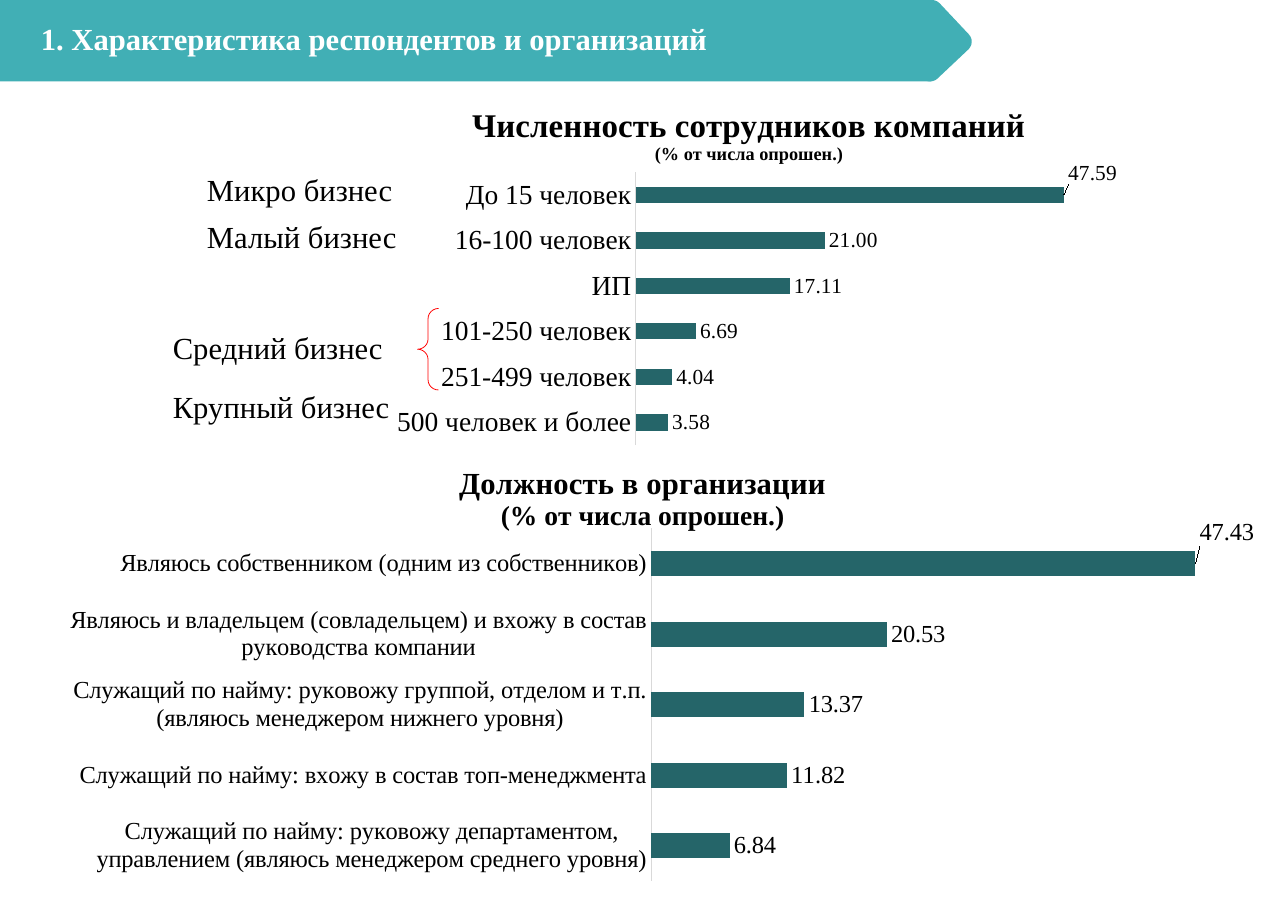
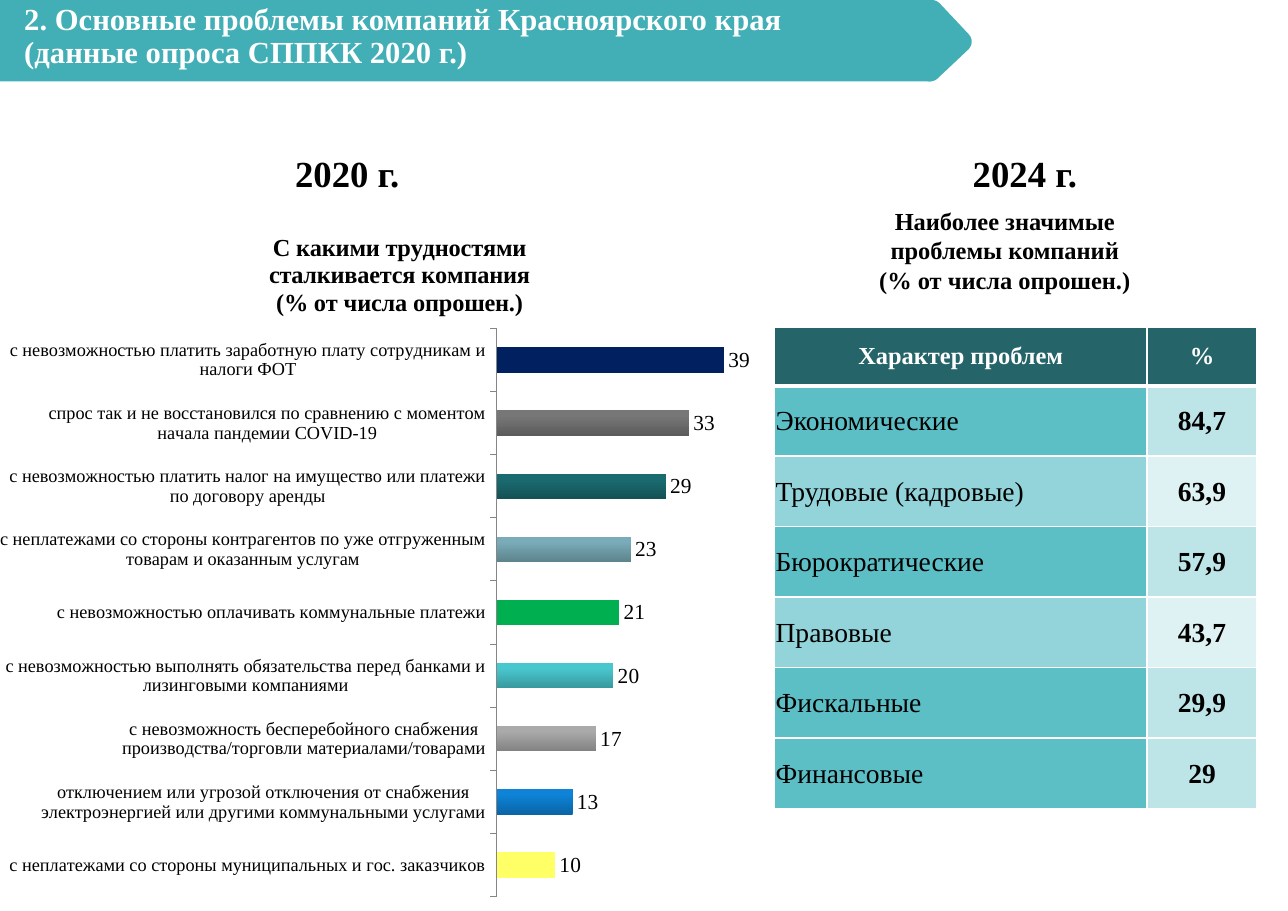
import pptx
import pptx.chart.data
import pptx.dml.color
import pptx.enum.chart
import pptx.enum.shapes
import pptx.enum.text
import pptx.oxml
import pptx.oxml.ns
import pptx.util

PX = 9144  # EMU in one px, 100 px to the inch
FONT = "Times New Roman"
COLORS = {
    "band": "41AFB5", "bar": "256569", "white": "FFFFFF", "black": "000000",
    "axis": "D9D9D9", "tick": "868686", "brace": "FF0000",
    "name_dark": "5CBFC5", "name_light": "92D4D9",
    "share_dark": "BDE5E8", "share_light": "DEF2F3",
}
RGB = {k: pptx.dml.color.RGBColor.from_string(v) for k, v in COLORS.items()}
CENTER = pptx.enum.text.PP_ALIGN.CENTER
LEFT = pptx.enum.text.PP_ALIGN.LEFT
MIDDLE = pptx.enum.text.MSO_ANCHOR.MIDDLE
SHAPE = pptx.enum.shapes.MSO_SHAPE
Pt = pptx.util.Pt
qn = pptx.oxml.ns.qn


def write(tf, lines, color="black", bold=False, align=LEFT):
    """Fill a text frame with one paragraph for each (text, size)."""
    for i, (text, size) in enumerate(lines):
        p = tf.add_paragraph() if i else tf.paragraphs[0]
        p.alignment = align
        r = p.add_run()
        r.text = text
        r.font.name, r.font.size, r.font.bold = FONT, Pt(size), bold
        r.font.color.rgb = RGB[color]


def set_layout(parent, index, **values):
    """Give a chart part a manual layout as child number index."""
    for old in parent.findall(qn("c:layout")):
        parent.remove(old)
    tags = "".join(f'<c:{k} val="{v}"/>' for k, v in values.items())
    parent.insert(index, pptx.oxml.parse_xml(
        f'<c:layout {pptx.oxml.ns.nsdecls("c")}>'
        f"<c:manualLayout>{tags}</c:manualLayout></c:layout>"))


prs = pptx.Presentation()
prs.slide_width, prs.slide_height = 1169 * PX, 827 * PX
layout = prs.slide_layouts[5]

# Titles
titles = [
    ((27, 14, 997, 45), ["1. Характеристика респондентов и организаций"]),
    ((12, 0, 851, 68), ["2. Основные проблемы компаний Красноярского края",
                        "(данные опроса СППКК 2020 г.)"]),
]
slides = []
for box, lines in titles:
    s = prs.slides.add_slide(layout)
    sp = s.shapes.title
    sp.left, sp.top, sp.width, sp.height = [v * PX for v in box]
    tf = sp.text_frame
    tf.auto_size = pptx.enum.text.MSO_AUTO_SIZE.NONE
    tf.vertical_anchor = MIDDLE
    write(tf, [(line, 20) for line in lines], "white", True)
    for p in tf.paragraphs:
        p.line_spacing = 0.9
    slides.append(s)
staff, problems = slides

# Title band, moved to the layout that both slides share
bands = [(SHAPE.RECTANGLE, (0, 0, 845, 74), 0),
         (SHAPE.ROUNDED_RECTANGLE, (816, 8, 58, 58), 46.7)]
for i, (kind, box, angle) in enumerate(bands):
    sp = staff.shapes.add_shape(kind, *[v * PX for v in box])
    sp.rotation = angle
    sp.shadow.inherit = False
    sp.fill.solid()
    sp.fill.fore_color.rgb = RGB["band"]
    sp.line.fill.background()
    layout.element.cSld.spTree.insert(2 + i, sp.element)

# Bar charts, categories from bottom to top
charts = [
    dict(slide=staff, box=(37, 411, 1108, 405), cat_size=16, label_size=16,
         title=[("Должность в организации", 20), ("(% от числа опрошен.)", 18)],
         title_at=(0.34, 0.02), plot=(0.5, 0.17, 0.47, 0.79), top=50, gap=182,
         fmt="0.00", lift=-0.07, axis="axis", tick="NONE", points={},
         data=[
             ("Служащий по найму: руковожу департаментом, управлением "
              "(являюсь менеджером среднего уровня)", 6.84),
             ("Служащий по найму: вхожу в состав топ-менеджмента", 11.82),
             ("Служащий по найму: руковожу группой, отделом и т.п. "
              "(являюсь менеджером нижнего уровня)", 13.37),
             ("Являюсь и владельцем (совладельцем) и вхожу в состав "
              "руководства компании", 20.53),
             ("Являюсь собственником (одним из собственников)", 47.43),
         ]),
    dict(slide=staff, box=(353, 76, 661, 335), cat_size=18, label_size=14,
         title=[("Численность сотрудников компаний", 21.6),
                ("(% от числа опрошен.)", 12)],
         title_at=(0.11, 0.05), plot=(0.34, 0.24, 0.62, 0.74), top=50, gap=182,
         fmt="0.00", lift=-0.06, axis="axis", tick="NONE", points={},
         data=[
             ("500 человек и более", 3.58),
             ("251-499 человек", 4.04),
             ("101-250 человек", 6.69),
             ("ИП", 17.11),
             ("16-100 человек", 21),
             ("До 15 человек", 47.59),
         ]),
    dict(slide=problems, box=(0, 182, 703, 645), cat_size=12, label_size=14,
         title=[("С какими трудностями", 16), ("сталкивается компания", 16),
                ("(% от числа опрошен.)", 16)],
         title_at=(0.34, 0.04), plot=(0.64, 0.18, 0.34, 0.8), top=45, gap=150,
         fmt="General", lift=0, axis="tick", tick="OUTSIDE",
         points={0: ["FFFF66"], 1: ["0A65A6", "0E83D7"],
                 2: ["838383", "AAAAAA"], 3: ["38999F", "49C7CE"],
                 4: ["00B050"], 5: ["5D848D", "79ABB8"],
                 6: ["145256", "1A6B70"], 7: ["5C5C5C", "777777"],
                 8: ["002060"]},
         data=[
             ("с неплатежами со стороны муниципальных и гос. заказчиков", 10),
             ("отключением или угрозой отключения от снабжения "
              "электроэнергией или другими коммунальными услугами", 13),
             ("с невозможность бесперебойного снабжения "
              "производства/торговли материалами/товарами", 17),
             ("с невозможностью выполнять обязательства перед банками "
              "и лизинговыми компаниями", 20),
             ("с невозможностью оплачивать коммунальные платежи", 21),
             ("с неплатежами со стороны контрагентов по уже отгруженным "
              "товарам и оказанным услугам", 23),
             ("с невозможностью платить налог на имущество или платежи "
              "по договору аренды", 29),
             ("спрос так и не восстановился по сравнению с моментом "
              "начала пандемии COVID-19", 33),
             ("с невозможностью платить заработную плату сотрудникам "
              "и налоги ФОТ", 39),
         ]),
]
for c in charts:
    data = pptx.chart.data.CategoryChartData(number_format=c["fmt"])
    data.categories = [name for name, _ in c["data"]]
    data.add_series("% от числа опрошен.", [value for _, value in c["data"]])
    chart = c["slide"].shapes.add_chart(
        pptx.enum.chart.XL_CHART_TYPE.BAR_CLUSTERED,
        *[v * PX for v in c["box"]], data).chart
    chart.has_legend = False
    chart.font.name, chart.font.size = FONT, Pt(c["cat_size"])
    chart.font.color.rgb = RGB["black"]

    title = chart.chart_title
    write(title.text_frame, c["title"], bold=True, align=CENTER)
    x, y = c["title_at"]
    set_layout(title._element, 1, xMode="edge", yMode="edge", x=x, y=y)
    x, y, w, h = c["plot"]
    set_layout(chart._chartSpace.chart.plotArea, 0, layoutTarget="inner",
               xMode="edge", yMode="edge", x=x, y=y, w=w, h=h)

    axis = chart.value_axis
    axis.visible = axis.has_major_gridlines = False
    axis.minimum_scale, axis.maximum_scale = 0, c["top"]
    axis = chart.category_axis
    axis.major_tick_mark = pptx.enum.chart.XL_TICK_MARK[c["tick"]]
    axis.format.line.color.rgb = RGB[c["axis"]]
    axis.format.line.width = Pt(0.75)

    plot = chart.plots[0]
    plot.vary_by_categories = False
    plot.gap_width = c["gap"]
    series = plot.series[0]
    series.format.fill.solid()
    series.format.fill.fore_color.rgb = RGB["bar"]
    for i, hexes in c["points"].items():
        shades = [pptx.dml.color.RGBColor.from_string(v) for v in hexes]
        fill = series.points[i].format.fill
        if len(shades) == 1:
            fill.solid()
            fill.fore_color.rgb = shades[0]
        else:
            fill.gradient()
            fill.gradient_angle = 90
            for stop, shade, at in zip(fill.gradient_stops, shades, (0, 0.8)):
                stop.color.rgb, stop.position = shade, at

    labels = series.data_labels
    labels.show_value = True
    labels.number_format, labels.number_format_is_linked = c["fmt"], False
    parts = [labels]
    if c["lift"]:
        last = len(c["data"]) - 1
        parts.append(series.points[last].data_label)
    for part in parts:
        part.position = pptx.enum.chart.XL_LABEL_POSITION.OUTSIDE_END
        part.font.name, part.font.size = FONT, Pt(c["label_size"])
        part.font.color.rgb = RGB["black"]
    if c["lift"]:
        dLbl = labels._element.find(qn("c:dLbl"))
        set_layout(dLbl, 1, x=0, y=c["lift"])

# Text boxes: slide, box, lines, size, bold, align, wrap
texts = [
    (staff, (147, 294, 219, 44), ["Средний бизнес"], 20, False, LEFT, True),
    (staff, (147, 347, 219, 44), ["Крупный бизнес"], 20, False, LEFT, True),
    (staff, (178, 150, 219, 44), ["Микро бизнес"], 20, False, LEFT, True),
    (staff, (178, 193, 219, 44), ["Малый бизнес"], 20, False, LEFT, True),
    (problems, (258, 132, 116, 50), ["2020 г."], 24, True, LEFT, False),
    (problems, (873, 132, 116, 50), ["2024 г."], 24, True, LEFT, False),
    (problems, (673, 182, 478, 91),
     ["Наиболее значимые", "проблемы компаний", "(% от числа опрошен.)"],
     16, True, CENTER, True),
]
for s, box, lines, size, bold, align, wrap in texts:
    tf = s.shapes.add_textbox(*[v * PX for v in box]).text_frame
    tf.word_wrap = wrap
    write(tf, [(line, size) for line in lines], bold=bold, align=align)

# Brace that joins the two medium-size groups
brace = staff.shapes.add_shape(SHAPE.RIGHT_BRACE,
                               *[v * PX for v in (379, 280, 19, 74)])
brace.rotation = 180
brace.adjustments[0] = 0.49
brace.shadow.inherit = False
brace.fill.background()
brace.line.color.rgb = RGB["brace"]
brace.line.width = Pt(0.5)

# Table of problems
rows = [
    ("Характер проблем", "%", "bar", "bar"),
    ("Экономические", "84,7", "name_dark", "share_dark"),
    ("Трудовые (кадровые)", "63,9", "name_light", "share_light"),
    ("Бюрократические", "57,9", "name_dark", "share_dark"),
    ("Правовые", "43,7", "name_light", "share_light"),
    ("Фискальные", "29,9", "name_dark", "share_dark"),
    ("Финансовые", "29", "name_dark", "share_dark"),
]
table = problems.shapes.add_table(
    len(rows), 2, *[v * PX for v in (703, 297, 438, 437)]).table
table.columns[0].width, table.columns[1].width = 338 * PX, 100 * PX
for i, row in enumerate(rows):
    head = i == 0
    table.rows[i].height = (53 if head else 64) * PX
    for j in range(2):
        cell = table.cell(i, j)
        cell.vertical_anchor = MIDDLE
        if not head:
            cell.margin_left = cell.margin_right = cell.margin_top = PX
            cell.margin_bottom = 0
        write(cell.text_frame, [(row[j], 16 if head else 18)],
              "white" if head else "black", head or j == 1,
              CENTER if head or j else LEFT)
        cell.fill.solid()
        cell.fill.fore_color.rgb = RGB[row[2 + j]]
        tcPr = cell._tc.get_or_add_tcPr()
        for k, side in enumerate("LRTB"):
            thick = (i, side) in [(0, "B"), (1, "T")]
            tcPr.insert(k, pptx.oxml.parse_xml(
                f'<a:ln{side} {pptx.oxml.ns.nsdecls("a")} '
                f'w="{Pt(3 if thick else 1)}"><a:solidFill>'
                f'<a:srgbClr val="{COLORS["white"]}"/></a:solidFill>'
                f"</a:ln{side}>"))

prs.save("out.pptx")
